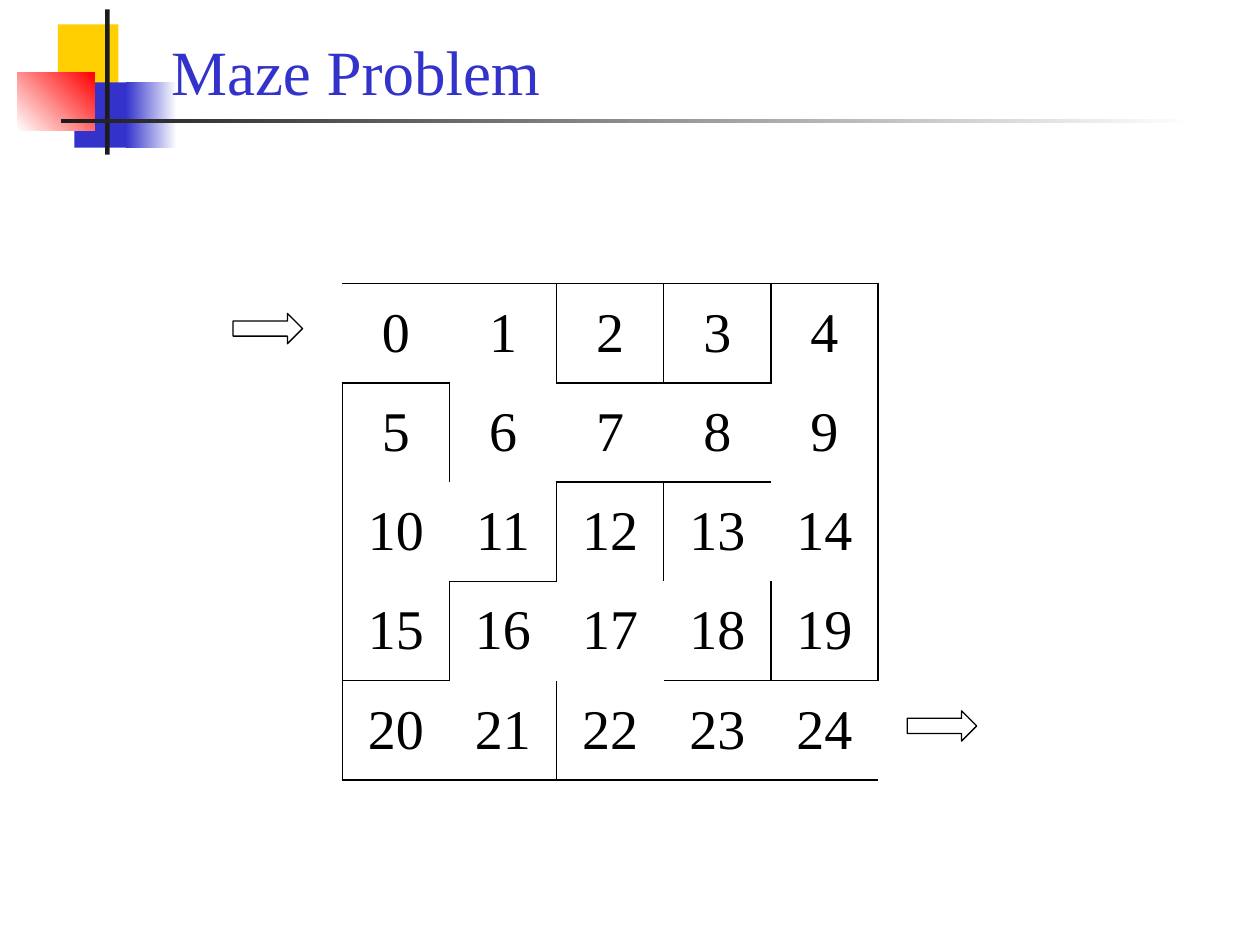
from dataclasses import dataclass
from lxml.etree import SubElement
from pptx import Presentation
from pptx.dml.color import RGBColor
from pptx.enum.shapes import MSO_SHAPE
from pptx.enum.text import MSO_ANCHOR, PP_ALIGN
from pptx.oxml.ns import qn
from pptx.slide import Slide
from pptx.util import Cm, Pt

BLACK = RGBColor(0x00, 0x00, 0x00)
WHITE = RGBColor(0xFF, 0xFF, 0xFF)
GOLD = RGBColor(0xFF, 0xCF, 0x01)
BLUE = RGBColor(0x33, 0x33, 0xCC)
RED = RGBColor(0xFF, 0x00, 0x00)
INK = RGBColor(0x1C, 0x1C, 0x1C)

SIZE = 5
ACROSS = ["11111", "10110", "00110", "01000", "10011", "11111"]
UPRIGHT = ["001111", "110001", "101101", "110011", "101000"]


@dataclass
class Pen:
    slide: Slide
    face: str = "Times New Roman"

    def label(self, frame, text, size, color, align):
        para = frame.paragraphs[0]
        para.alignment = align
        run = para.add_run()
        run.text = text
        style = {"name": self.face, "size": Pt(size)}
        for key, value in style.items():
            setattr(run.font, key, value)
        run.font.color.rgb = color

    def title(self, box, text):
        frame = self.slide.shapes.add_textbox(*map(Cm, box)).text_frame
        style = {"word_wrap": True, "vertical_anchor": MSO_ANCHOR.BOTTOM}
        for key, value in style.items():
            setattr(frame, key, value)
        self.label(frame, text, 36, BLUE, PP_ALIGN.LEFT)

    def shape(self, kind, box):
        shape = self.slide.shapes.add_shape(kind, *map(Cm, box))
        shape.shadow.inherit = False
        return shape

    def block(self, box, *colors, angle=0):
        shape = self.shape(MSO_SHAPE.RECTANGLE, box)
        shape.line.fill.background()
        if len(colors) == 1:
            shape.fill.solid()
            shape.fill.fore_color.rgb = colors[0]
            return
        shape.fill.gradient()
        shape.fill.gradient_angle = angle
        for spot, (stop, color) in enumerate(zip(shape.fill.gradient_stops, colors)):
            stop.color.rgb = color
            stop.position = spot

    def arrow(self, box):
        shape = self.shape(MSO_SHAPE.RIGHT_ARROW, box)
        shape.fill.background()
        shape.line.color.rgb = BLACK
        shape.line.width = Pt(0.75)

    def wall(self, cell, side, shown):
        edge = SubElement(cell._tc.get_or_add_tcPr(), qn(f"a:ln{side}"), w=str(Pt(1)))
        if shown:
            fill = SubElement(edge, qn("a:solidFill"))
            SubElement(fill, qn("a:srgbClr"), val=str(BLACK))
        else:
            SubElement(edge, qn("a:noFill"))

    def maze(self, box):
        table = self.slide.shapes.add_table(SIZE, SIZE, *map(Cm, box)).table
        table.first_row = table.horz_banding = False
        for row in range(SIZE):
            for col in range(SIZE):
                cell = table.cell(row, col)
                cell.vertical_anchor = MSO_ANCHOR.MIDDLE
                text = str(row * SIZE + col)
                self.label(cell.text_frame, text, 32, BLACK, PP_ALIGN.CENTER)
                walls = {
                    "L": UPRIGHT[row][col],
                    "R": UPRIGHT[row][col + 1],
                    "T": ACROSS[row][col],
                    "B": ACROSS[row + 1][col],
                }
                for side, mark in walls.items():
                    self.wall(cell, side, mark == "1")
                cell.fill.background()


def main():
    deck = Presentation()
    deck.slide_width, deck.slide_height = Cm(25.4), Cm(19.05)
    pen = Pen(deck.slides.add_slide(deck.slide_layouts[6]))

    pen.block((1.17, 0.49, 1.22, 1.32), GOLD)
    pen.block((1.5, 1.66, 1.17, 1.32), BLUE)
    pen.block((2.54, 1.66, 1.02, 1.32), BLUE, WHITE)
    pen.block((0.35, 1.46, 1.56, 1.18), WHITE, RED, angle=45)
    pen.block((2.12, 0.19, 0.09, 2.93), INK)
    pen.block((1.23, 2.39, 22.86, 0.09), INK, WHITE)

    pen.title((3.2, 0.41, 21.64, 1.9), "Maze Problem")
    pen.maze((6.9, 5.72, 10.8, 10))
    for left, top in ((4.7, 6.32), (18.29, 14.33)):
        pen.arrow((left, top, 1.4, 0.61))

    deck.save("out.pptx")


if __name__ == "__main__":
    main()
